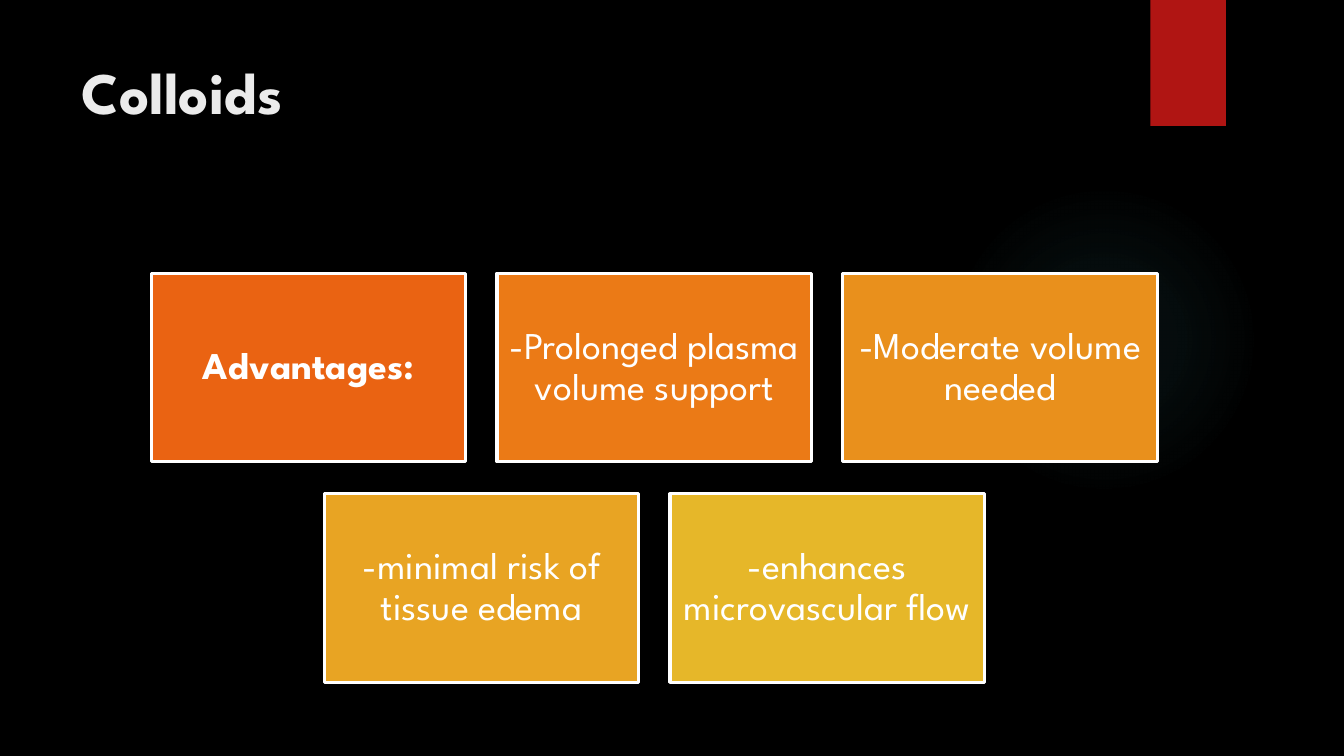
from pptx import Presentation
from pptx.dml.color import RGBColor
from pptx.enum.shapes import MSO_SHAPE
from pptx.enum.text import MSO_ANCHOR, PP_ALIGN
from pptx.oxml import parse_xml
from pptx.oxml.ns import nsdecls
from pptx.util import Inches, Pt

RECT = MSO_SHAPE.RECTANGLE
OVAL = MSO_SHAPE.OVAL
MIDDLE = MSO_ANCHOR.MIDDLE
TOP = MSO_ANCHOR.TOP
LEFT = PP_ALIGN.LEFT
CENTER = PP_ALIGN.CENTER

FONT = "League Spartan"
WHITE = "FFFFFF"
CARD_W, CARD_H = 3.12, 1.87
STEP_X, STEP_Y = 3.43, 2.19
MID_X, TOP_Y = 6.49, 2.71
ROWS = [
    [("Advantages:", "EA6312", True),
     ("-Prolonged plasma volume support", "EB7A16", False),
     ("-Moderate volume needed", "E9901C", False)],
    [("-minimal risk of tissue edema", "E8A423", False),
     ("-enhances microvascular flow", "E6B729", False)],
]


def color(code):
    return RGBColor.from_string(code)


def add_block(slide, kind, box, fill=None, line=None):
    shape = slide.shapes.add_shape(kind, *map(Inches, box))
    shape.shadow.inherit = False
    if fill:
        shape.fill.solid()
        shape.fill.fore_color.rgb = color(fill)
    else:
        shape.fill.background()
    if line:
        shape.line.color.rgb = color(line)
        shape.line.width = Pt(2.25)
    else:
        shape.line.fill.background()
    return shape


def add_glow(slide, box, code, stops):
    glow = add_block(slide, OVAL, box)
    marks = "".join(
        f'<a:gs pos="{pos * 1000}"><a:srgbClr val="{code}">'
        f'<a:alpha val="{alpha * 1000}"/></a:srgbClr></a:gs>'
        for pos, alpha in stops)
    grad = parse_xml(
        f'<a:gradFill {nsdecls("a")} rotWithShape="1"><a:gsLst>{marks}</a:gsLst>'
        '<a:path path="circle"><a:fillToRect l="50000" t="50000" r="50000" b="50000"/>'
        '</a:path></a:gradFill>')
    props = glow.element.spPr
    props.replace(props.find("{*}noFill"), grad)


def set_text(shape, text, size, code, bold, align, anchor):
    frame = shape.text_frame
    frame.word_wrap = True
    frame.vertical_anchor = anchor
    para = frame.paragraphs[0]
    para.text = text
    para.alignment = align
    font = para.font
    font.name, font.size, font.bold = FONT, Pt(size), bold
    font.color.rgb = color(code)
    return frame


def add_title(slide, text):
    box = slide.shapes.add_textbox(*map(Inches, (0.71, 0.5, 10.29, 1.53)))
    set_text(box, text, 42, "EBEBEB", True, LEFT, TOP)


def add_card(slide, left, top, text, fill, bold):
    card = add_block(slide, RECT, (left, top, CARD_W, CARD_H), fill, WHITE)
    frame = set_text(card, text, 27, WHITE, bold, CENTER, MIDDLE)
    frame.margin_left = frame.margin_right = Inches(0.11)
    frame.margin_top = frame.margin_bottom = Inches(0.11)
    frame.paragraphs[0].line_spacing = 0.9


def add_cards(slide):
    for row, cards in enumerate(ROWS):
        width = (len(cards) - 1) * STEP_X + CARD_W
        for col, card in enumerate(cards):
            left = MID_X - width / 2 + col * STEP_X
            add_card(slide, left, TOP_Y + row * STEP_Y, *card)


def main():
    deck = Presentation()
    deck.slide_width, deck.slide_height = Inches(13.33), Inches(7.5)
    slide = deck.slides.add_slide(deck.slide_layouts[6])
    slide.background.fill.solid()
    slide.background.fill.fore_color.rgb = color("000000")
    add_glow(slide, (9.41, 1.83, 3.08, 3.08), "50B9C1", [(0, 7), (36, 6), (69, 0)])
    add_block(slide, RECT, (11.41, 0, 0.75, 1.25), "B01513")
    add_title(slide, "Colloids")
    add_cards(slide)
    deck.save("out.pptx")


if __name__ == "__main__":
    main()
